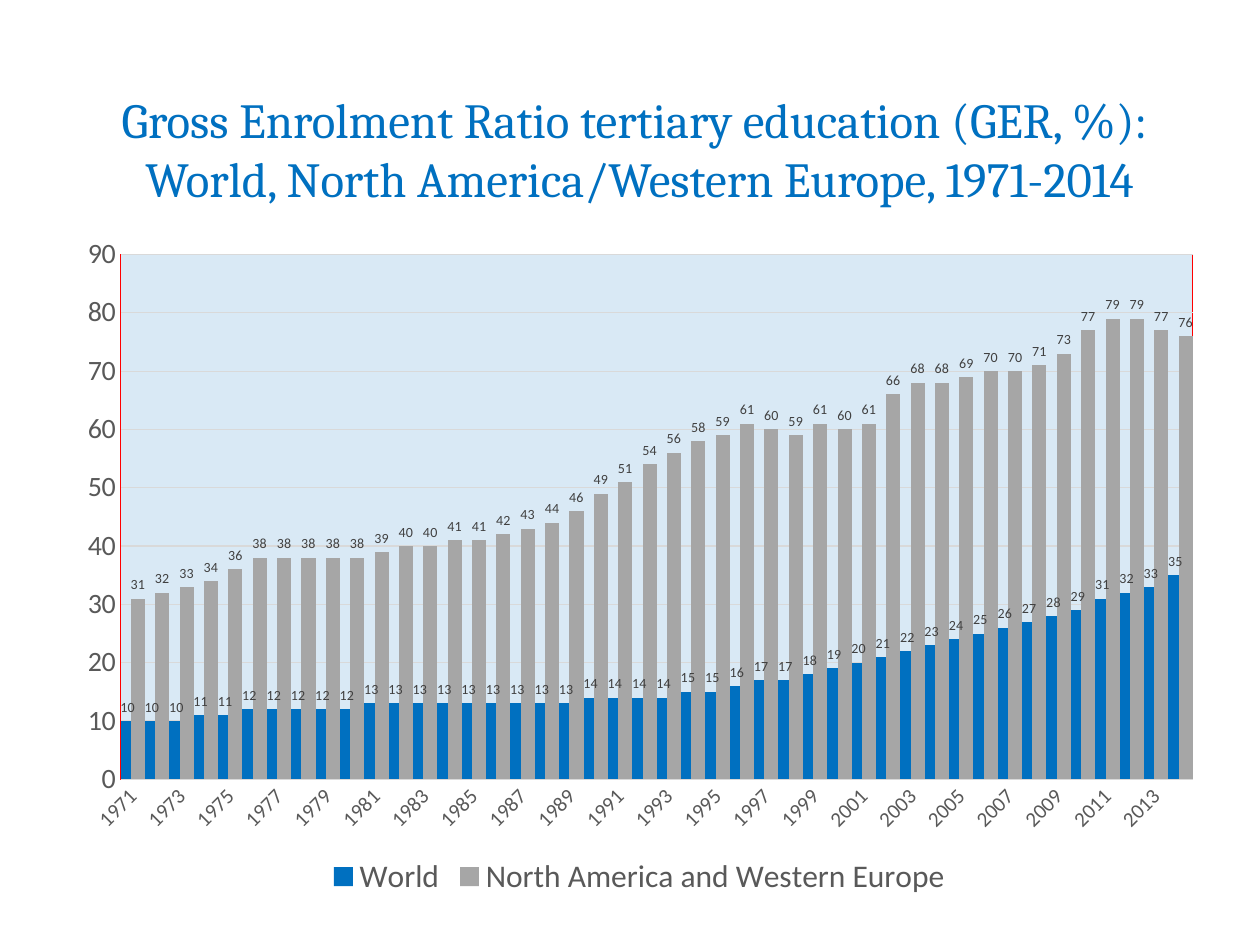
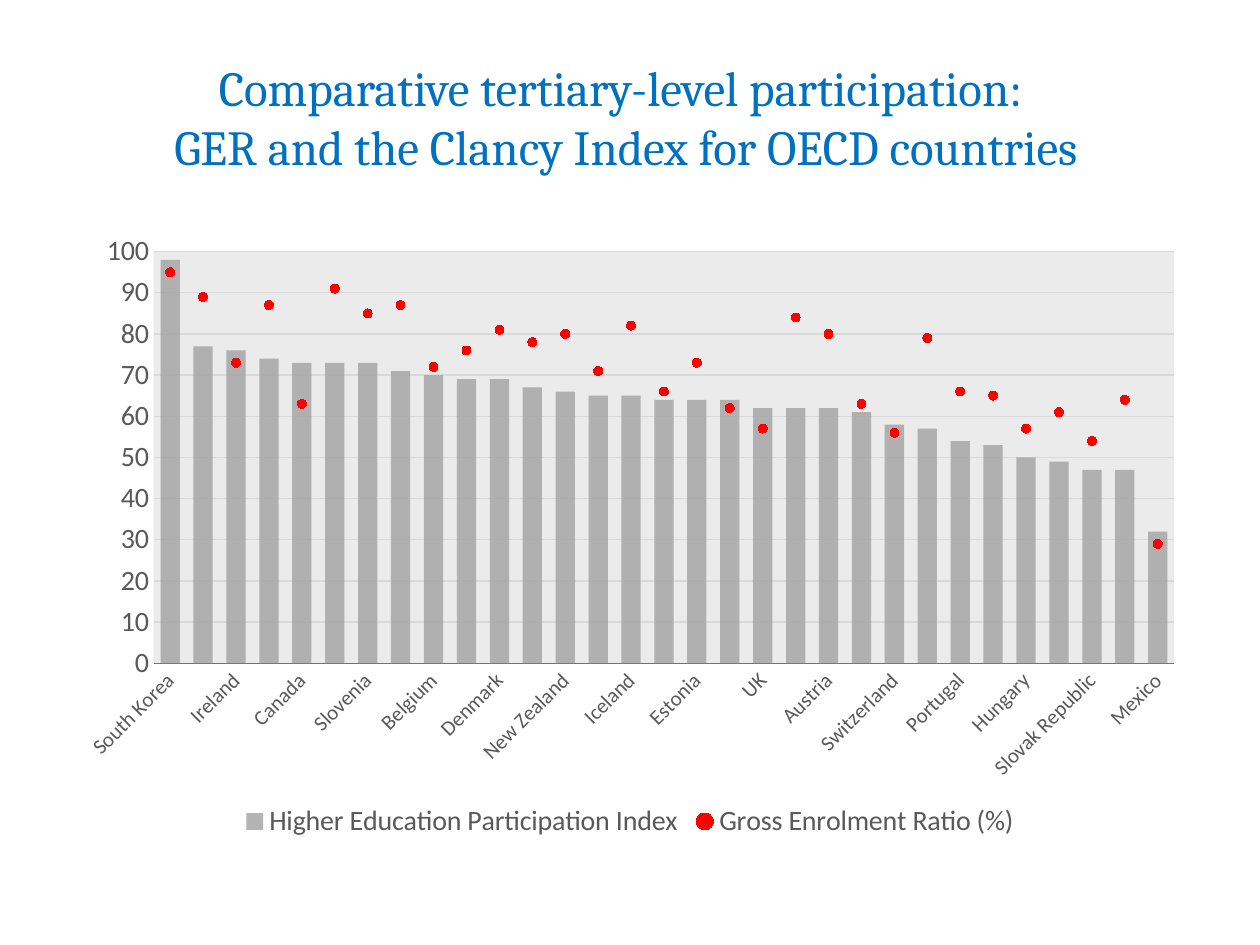
import pptx
import pptx.chart.data
import pptx.dml.color
import pptx.enum.chart
import pptx.enum.text
import pptx.oxml
import pptx.oxml.ns
import pptx.util

Pt = pptx.util.Pt
qn = pptx.oxml.ns.qn

COLORS = {
    "blue": "0070C0", "grey": "A6A6A6", "pale": "D9D9D9", "text": "595959",
    "label": "404040", "red": "FF0000", "purple": "8064A2", "black": "000000",
}
BODY_FONT = "Calibri"
TITLE_FONT = "Cambria"

WORLD_GER = [10, 10, 10, 11, 11, 12, 12, 12, 12, 12, 13, 13, 13, 13, 13, 13, 13, 13, 13, 14, 14, 14,
             14, 15, 15, 16, 17, 17, 18, 19, 20, 21, 22, 23, 24, 25, 26, 27, 28, 29, 31, 32, 33, 35]
WESTERN_GER = [31, 32, 33, 34, 36, 38, 38, 38, 38, 38, 39, 40, 40, 41, 41, 42, 43, 44, 46, 49, 51, 54,
               56, 58, 59, 61, 60, 59, 61, 60, 61, 66, 68, 68, 69, 70, 70, 71, 73, 77, 79, 79, 77, 76]

PARTICIPATION = [
    ("South Korea", 98, 95), ("United States", 77, 89), ("Ireland", 76, 73), ("Australia", 74, 87),
    ("Canada", 73, 63), ("Finland", 73, 91), ("Slovenia", 73, 85), ("Spain", 71, 87),
    ("Belgium", 70, 72), ("Norway", 69, 76), ("Denmark", 69, 81), ("Netherlands", 67, 78),
    ("New Zealand", 66, 80), ("Poland", 65, 71), ("Iceland", 65, 82), ("Israel", 64, 66),
    ("Estonia", 64, 73), ("France", 64, 62), ("UK", 62, 57), ("Chile", 62, 84),
    ("Austria", 62, 80), ("Sweden", 61, 63), ("Switzerland", 58, 56), ("Turkey", 57, 79),
    ("Portugal", 54, 66), ("Czech Republic", 53, 65), ("Hungary", 50, 57), ("Germany", 49, 61),
    ("Slovak Republic", 47, 54), ("Italy", 47, 64), ("Mexico", 32, 29),
]


def rgb(name):
    return pptx.dml.color.RGBColor.from_string(COLORS[name])


def style_font(font, size, color, face=BODY_FONT):
    font.size = Pt(size)
    font.name = face
    font.bold = False
    font.color.rgb = rgb(color)


def write_text(frame, text, size, color, face, align):
    frame.word_wrap = True
    frame.vertical_anchor = pptx.enum.text.MSO_ANCHOR.MIDDLE
    paragraph = frame.paragraphs[0]
    paragraph.text = text
    paragraph.alignment = align
    for run in paragraph.runs:
        style_font(run.font, size, color, face)


def add_titled_slide(deck, heading, width, height):
    slide = deck.slides.add_slide(deck.slide_layouts[5])
    title = slide.shapes.title
    title.left, title.top, title.width, title.height = Pt(10.8), Pt(21.6), Pt(width), Pt(height)
    write_text(title.text_frame, heading, size=28, color="blue", face=TITLE_FONT,
               align=pptx.enum.text.PP_ALIGN.CENTER)
    return slide


def style_plot_area(chart, inner, fill, opacity, border=None):
    plot_area = chart._chartSpace.find(".//" + qn("c:plotArea"))
    for old_layout in plot_area.findall(qn("c:layout")):
        plot_area.remove(old_layout)
    sides = "".join(f'<c:{side} val="{value}"/>' for side, value in zip("xywh", inner))
    plot_area.insert(0, pptx.oxml.parse_xml(
        f'<c:layout {pptx.oxml.ns.nsdecls("c")}><c:manualLayout><c:layoutTarget val="inner"/>'
        f'<c:xMode val="edge"/><c:yMode val="edge"/>{sides}</c:manualLayout></c:layout>'))
    outline = (f'<a:solidFill><a:srgbClr val="{COLORS[border]}"/></a:solidFill>'
               if border else "<a:noFill/>")
    plot_area.append(pptx.oxml.parse_xml(
        f'<c:spPr {pptx.oxml.ns.nsdecls("c", "a")}><a:solidFill><a:srgbClr val="{COLORS[fill]}">'
        f'<a:alpha val="{opacity * 1000}"/></a:srgbClr></a:solidFill>'
        f'<a:ln w="9525">{outline}</a:ln></c:spPr>'))


def style_axes(chart, top, line_color, line_width):
    categories, values = chart.category_axis, chart.value_axis
    for axis, size in ((categories, 12), (values, 16)):
        axis.major_tick_mark = axis.minor_tick_mark = pptx.enum.chart.XL_TICK_MARK.NONE
        style_font(axis.tick_labels.font, size, "text")
    categories.format.line.color.rgb = rgb(line_color)
    categories.format.line.width = Pt(line_width)
    element = categories._element
    element.find(qn("c:txPr")).find(qn("a:bodyPr")).set("rot", "-2700000")
    element.find(qn("c:noMultiLvlLbl")).addprevious(pptx.oxml.parse_xml(
        f'<c:tickLblSkip {pptx.oxml.ns.nsdecls("c")} val="2"/>'))
    values.minimum_scale, values.maximum_scale, values.major_unit = 0, top, 10
    values.format.line.fill.background()
    values.major_gridlines.format.line.color.rgb = rgb("pale")
    values.major_gridlines.format.line.width = Pt(0.75)


def add_columns(slide, size, categories, series, gap, overlap, legend_size):
    data = pptx.chart.data.CategoryChartData()
    data.categories = categories
    for name, values in series.items():
        data.add_series(name, values)
    chart = slide.shapes.add_chart(pptx.enum.chart.XL_CHART_TYPE.COLUMN_CLUSTERED,
                                   Pt(36), Pt(126), Pt(size[0]), Pt(size[1]), data).chart
    style_font(chart.font, 10, "black")
    chart.has_title = False
    chart.has_legend = True
    chart.legend.position = pptx.enum.chart.XL_LEGEND_POSITION.BOTTOM
    chart.legend.include_in_layout = False
    style_font(chart.legend.font, legend_size, "text")
    columns = chart.plots[0]
    columns.gap_width, columns.overlap, columns.vary_by_categories = gap, overlap, False
    return chart


def fill_series(series, color, opacity=100):
    series.invert_if_negative = False
    series.format.fill.solid()
    series.format.fill.fore_color.rgb = rgb(color)
    if opacity < 100:
        tint = series._element.find(qn("c:spPr")).find(".//" + qn("a:srgbClr"))
        tint.append(pptx.oxml.parse_xml(
            f'<a:alpha {pptx.oxml.ns.nsdecls("a")} val="{opacity * 1000}"/>'))


def label_series(series):
    labels = series.data_labels
    labels.show_value = True
    labels.number_format = "#,##0"
    labels.number_format_is_linked = False
    labels.position = pptx.enum.chart.XL_LABEL_POSITION.OUTSIDE_END
    style_font(labels.font, 8, "label")


def turn_last_series_into_dots(chart, color):
    columns = chart._chartSpace.find(".//" + qn("c:barChart"))
    dots = columns.findall(qn("c:ser"))[-1]
    for column_setting in dots.findall(qn("c:invertIfNegative")):
        dots.remove(column_setting)
    axis_ids = "".join(f'<c:axId val="{axis.get("val")}"/>' for axis in columns.findall(qn("c:axId")))
    line_chart = pptx.oxml.parse_xml(
        f'<c:lineChart {pptx.oxml.ns.nsdecls("c")}><c:grouping val="standard"/>'
        f'<c:varyColors val="0"/><c:marker val="1"/>{axis_ids}</c:lineChart>')
    line_chart.find(qn("c:varyColors")).addnext(dots)
    columns.addnext(line_chart)
    series = chart.plots[1].series[0]
    series.smooth = False
    series.format.line.fill.background()
    series.marker.style = pptx.enum.chart.XL_MARKER_STYLE.CIRCLE
    series.marker.size = 5
    series.marker.format.fill.solid()
    series.marker.format.fill.fore_color.rgb = rgb(color)
    series.marker.format.line.color.rgb = rgb(color)


def add_enrolment_slide(deck):
    slide = add_titled_slide(
        deck, "Gross Enrolment Ratio tertiary education (GER, %): \v"
              "World, North America/Western Europe, 1971-2014", 709.2, 126)
    chart = add_columns(slide, (658.8, 389.5), [str(year) for year in range(1971, 2015)],
                        {"World": WORLD_GER, "North America and Western Europe": WESTERN_GER},
                        gap=0, overlap=27, legend_size=18)
    style_axes(chart, 90, "pale", 0.75)
    style_plot_area(chart, (0.05, 0.05, 0.93, 0.77), "blue", 15, border="red")
    for series, color in zip(chart.plots[0].series, ("blue", "grey")):
        fill_series(series, color)
        label_series(series)


def add_participation_slide(deck):
    slide = add_titled_slide(
        deck, "Comparative tertiary-level participation: \v"
              "GER and the Clancy Index for OECD countries", 693.4, 90)
    countries, index, enrolment = zip(*PARTICIPATION)
    chart = add_columns(slide, (648, 356.4), countries,
                        {"Higher Education Participation Index": index,
                         "Gross Enrolment Ratio (%)": enrolment},
                        gap=71, overlap=-27, legend_size=16)
    style_axes(chart, 100, "purple", 0.25)
    style_plot_area(chart, (0.08, 0.05, 0.9, 0.66), "pale", 51)
    turn_last_series_into_dots(chart, "red")
    fill_series(chart.plots[0].series[0], "grey", 85)


def main():
    deck = pptx.Presentation()
    deck.slide_width, deck.slide_height = Pt(720), Pt(540)
    add_enrolment_slide(deck)
    add_participation_slide(deck)
    deck.save("out.pptx")


if __name__ == "__main__":
    main()
